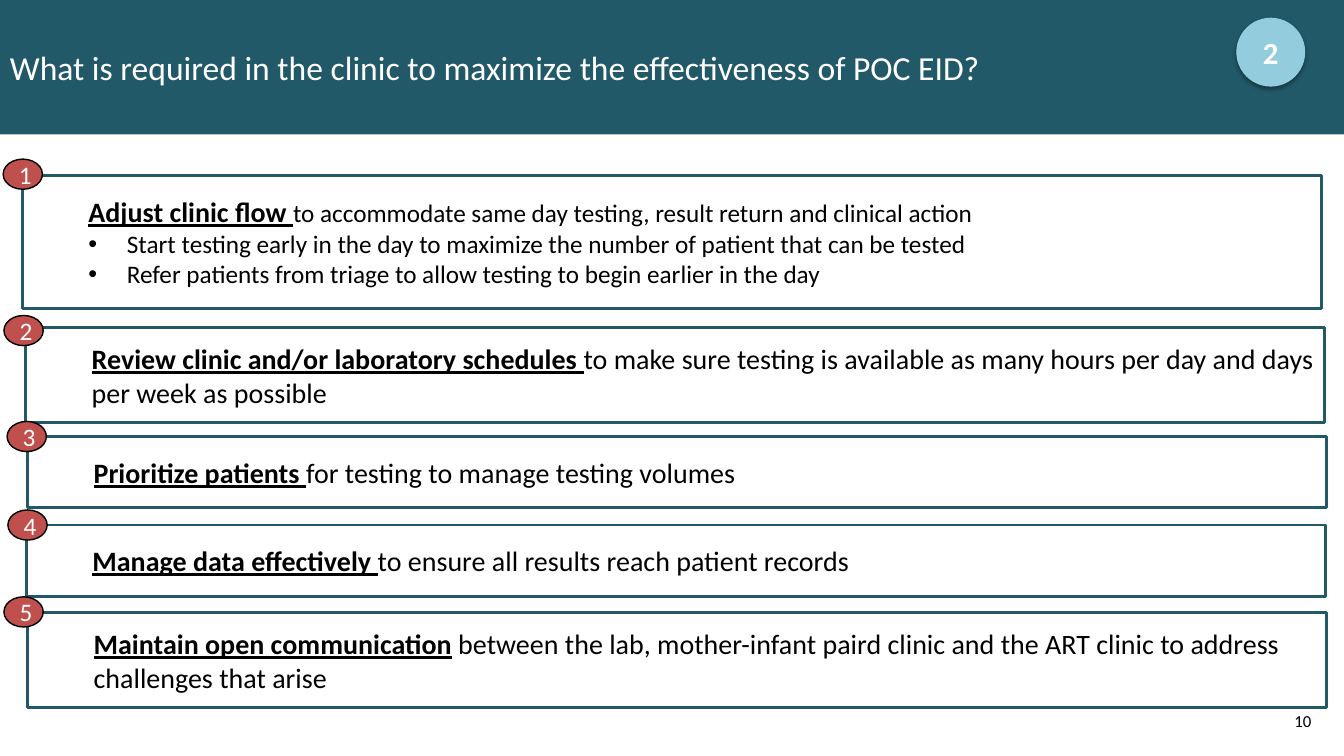
from lxml import etree
from pptx import Presentation
from pptx.dml.color import RGBColor
from pptx.enum.shapes import MSO_SHAPE
from pptx.enum.text import MSO_ANCHOR, PP_ALIGN
from pptx.oxml.ns import qn
from pptx.util import Cm, Pt

RECTANGLE, OVAL = MSO_SHAPE.RECTANGLE, MSO_SHAPE.OVAL
MIDDLE = MSO_ANCHOR.MIDDLE
LEFT, CENTER, RIGHT = PP_ALIGN.LEFT, PP_ALIGN.CENTER, PP_ALIGN.RIGHT

# Content
TITLE = "What is required in the clinic to maximize the effectiveness of POC EID?"
SECTION = "2"
PAGE_NUMBER = "10"

# Each step: box (left, top, height), badge (left, top), lead, rest, size of rest, bullets
STEPS = [
    ((0.56, 4.42, 3.35), (0.08, 4.01), "Adjust clinic flow ",
     "to accommodate same day testing, result return and clinical action", 18,
     ["Start testing early in the day to maximize the number of patient that can be tested",
      "Refer patients from triage to allow testing to begin earlier in the day"]),
    ((0.64, 8.26, 2.39), (0.1, 7.95), "Review clinic and/or laboratory schedules ",
     "to make sure testing is available as many hours per day and days per week as possible",
     20, []),
    ((0.69, 11, 1.8), (0.18, 10.62), "Prioritize patients ",
     "for testing to manage testing volumes", 20, []),
    ((0.66, 13.23, 1.8), (0.2, 12.85), "Manage data effectively ",
     "to ensure all results reach patient records", 20, []),
    ((0.69, 15.44, 2.39), (0.1, 15.04), "Maintain open communication",
     " between the lab, mother-infant paird clinic and the ART clinic to address "
     "challenges that arise", 20, []),
]

COLORS = {"teal": "215968", "white": "FFFFFF", "black": "000000",
          "red": "C0504D", "sky": "93CDDD"}
FONT = "Calibri"
PAGE_WIDTH, PAGE_HEIGHT = 33.87, 19.05
BOX_WIDTH = 32.74
BADGE_SIZE = (0.99, 0.76)
TEXT_INDENT, BULLET_INDENT, BULLET_HANG = 1.42, 2.39, 0.97


def color(name):
    return RGBColor.from_string(COLORS[name])


def add_block(page, kind, left, top, width, height, fill, line=None, line_width=1):
    block = page.shapes.add_shape(kind, Cm(left), Cm(top), Cm(width), Cm(height))
    block.shadow.inherit = False
    block.fill.solid()
    block.fill.fore_color.rgb = color(fill)
    if line:
        block.line.color.rgb = color(line)
        block.line.width = Pt(line_width)
    else:
        block.line.fill.background()
    block.text_frame.word_wrap = True
    block.text_frame.vertical_anchor = MIDDLE
    return block


def add_span(para, text, size, tint, bold=False, underline=False):
    span = para.add_run()
    span.text = text
    span.font.name = FONT
    span.font.size = Pt(size)
    span.font.color.rgb = color(tint)
    span.font.bold = bold
    span.font.underline = underline


def add_line(box, text, size, tint, align, bold=False):
    para = box.text_frame.paragraphs[0]
    para.alignment = align
    add_span(para, text, size, tint, bold)


def indent(para, left, hang=0):
    para.alignment = LEFT
    properties = para._p.get_or_add_pPr()
    properties.set("marL", str(Cm(left)))
    properties.set("indent", str(-Cm(hang)))
    if hang:
        etree.SubElement(properties, qn("a:buFont"), typeface="Arial")
        etree.SubElement(properties, qn("a:buChar"), char="•")


def add_soft_shadow(shape):
    effects = shape._element.spPr.find(qn("a:effectLst"))
    shadow = etree.SubElement(effects, qn("a:outerShdw"), blurRad=str(Pt(3.1)),
                              dist=str(Pt(1.8)), dir="5400000", rotWithShape="0")
    tint = etree.SubElement(shadow, qn("a:srgbClr"), val=COLORS["black"])
    etree.SubElement(tint, qn("a:alpha"), val="35000")


def add_step(page, number, step):
    (left, top, height), badge_place, lead, rest, rest_size, bullets = step
    box = add_block(page, RECTANGLE, left, top, BOX_WIDTH, height, "white", "teal", 2)
    para = box.text_frame.paragraphs[0]
    indent(para, TEXT_INDENT)
    add_span(para, lead, 20, "black", bold=True, underline=True)
    add_span(para, rest, rest_size, "black")
    for bullet in bullets:
        para = box.text_frame.add_paragraph()
        indent(para, BULLET_INDENT, BULLET_HANG)
        add_span(para, bullet, rest_size, "black")
    badge = add_block(page, OVAL, *badge_place, *BADGE_SIZE, "red", "black")
    add_line(badge, str(number), 18, "white", CENTER)


def main():
    deck = Presentation()
    deck.slide_width, deck.slide_height = Cm(PAGE_WIDTH), Cm(PAGE_HEIGHT)
    page = deck.slides.add_slide(deck.slide_layouts[6])

    # Title band
    band = add_block(page, RECTANGLE, 0, 0, PAGE_WIDTH, 3.39, "teal")
    add_line(band, TITLE, 24, "white", LEFT)

    # Numbered steps
    for number, step in enumerate(STEPS, start=1):
        add_step(page, number, step)

    # Section marker
    marker = add_block(page, OVAL, 31.17, 0.46, 1.71, 1.71, "sky", "sky", 0.75)
    add_soft_shadow(marker)
    add_line(marker, SECTION, 22, "white", CENTER, bold=True)

    # Page number
    footer = page.shapes.add_textbox(Cm(30.76), Cm(17.65), Cm(2.54), Cm(1.02))
    footer.text_frame.word_wrap = True
    footer.text_frame.vertical_anchor = MIDDLE
    add_line(footer, PAGE_NUMBER, 12, "black", RIGHT)

    deck.save("out.pptx")


if __name__ == "__main__":
    main()
